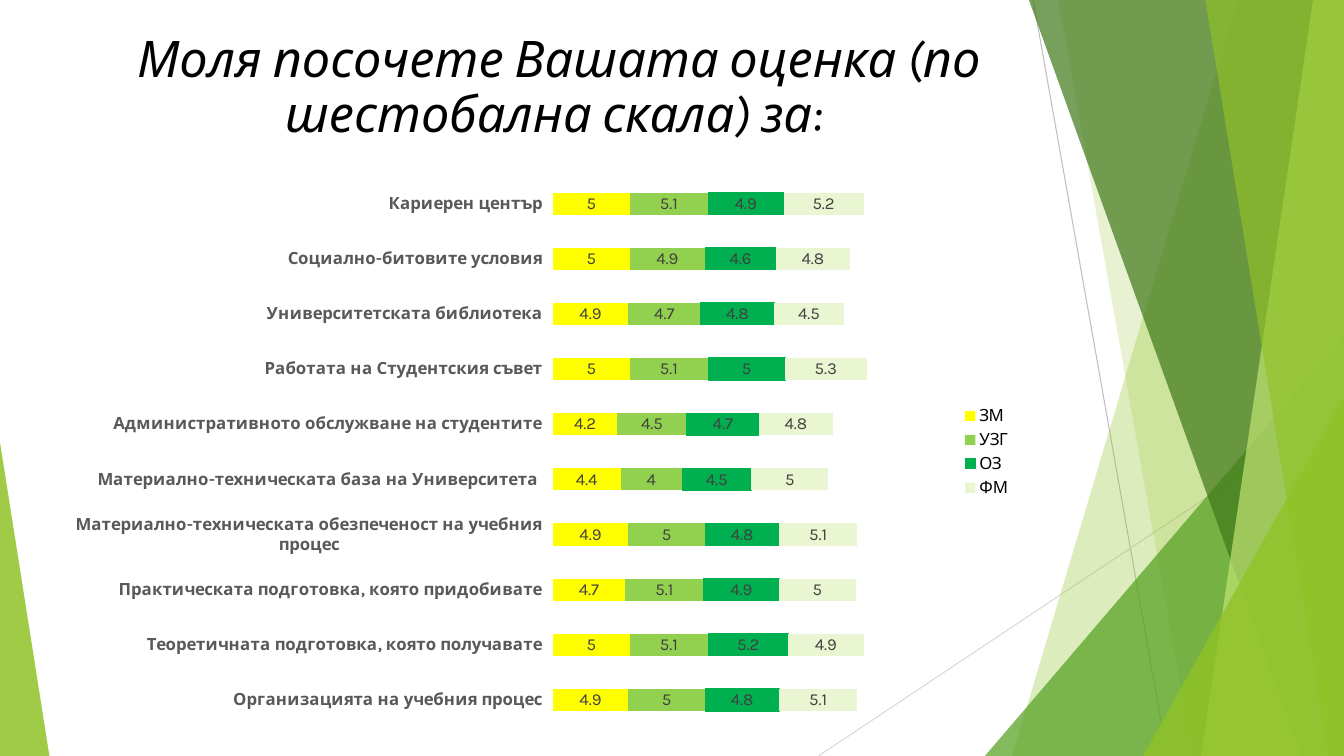
from lxml import etree
from pptx import Presentation
from pptx.chart.data import CategoryChartData
from pptx.dml.color import RGBColor
from pptx.enum.chart import XL_CHART_TYPE, XL_LABEL_POSITION, XL_LEGEND_POSITION, XL_TICK_MARK
from pptx.enum.shapes import MSO_CONNECTOR, MSO_SHAPE
from pptx.enum.text import MSO_ANCHOR, MSO_AUTO_SIZE, PP_ALIGN
from pptx.oxml import parse_xml
from pptx.oxml.ns import nsdecls, qn
from pptx.util import Pt

STRAIGHT = MSO_CONNECTOR.STRAIGHT
TRIANGLE = MSO_SHAPE.ISOSCELES_TRIANGLE
STACKED_BAR = XL_CHART_TYPE.BAR_STACKED
LABEL_CENTER = XL_LABEL_POSITION.CENTER
LEGEND_RIGHT = XL_LEGEND_POSITION.RIGHT
TICK_OUTSIDE = XL_TICK_MARK.OUTSIDE

FONT = "Karla"
BLACK = RGBColor(0x00, 0x00, 0x00)
LABEL_GRAY = RGBColor(0x40, 0x40, 0x40)
AXIS_GRAY = RGBColor(0x59, 0x59, 0x59)
MID_GRAY = RGBColor(0xBF, 0xBF, 0xBF)
LIGHT_GRAY = RGBColor(0xD9, 0xD9, 0xD9)
LEAF = RGBColor(0x90, 0xC2, 0x26)
GRASS = RGBColor(0x54, 0xA0, 0x21)
FOREST = RGBColor(0x3F, 0x78, 0x19)
LIME = RGBColor(0xC0, 0xE4, 0x74)
YELLOW = RGBColor(0xFF, 0xFF, 0x00)
LIGHT_GREEN = RGBColor(0x92, 0xD0, 0x50)
GREEN = RGBColor(0x00, 0xB0, 0x50)
PALE_GREEN = RGBColor(0xEA, 0xF6, 0xD1)

WIDTH, HEIGHT = 960, 540

TITLE = "Моля посочете Вашата оценка (по шестобална скала) за: "
TOPICS = [
    "Организацията на учебния процес",
    "Теоретичната подготовка, която получавате",
    "Практическата подготовка, която придобивате",
    "Материално-техническата обезпеченост на учебния процес",
    "Материално-техническата база на Университета ",
    "Административното обслужване на студентите",
    "Работата на Студентския съвет",
    "Университетската библиотека",
    "Социално-битовите условия",
    "Кариерен център",
]
FACULTIES = [
    ("ЗМ", YELLOW, [4.9, 5, 4.7, 4.9, 4.4, 4.2, 5, 4.9, 5, 5]),
    ("УЗГ", LIGHT_GREEN, [5, 5.1, 5.1, 5, 4, 4.5, 5.1, 4.7, 4.9, 5.1]),
    ("ОЗ", GREEN, [4.8, 5.2, 4.9, 4.8, 4.5, 4.7, 5, 4.8, 4.6, 4.9]),
    ("ФМ", PALE_GREEN, [5.1, 4.9, 5, 5.1, 5, 4.8, 5.3, 4.5, 4.8, 5.2]),
]


def format_font(font, size, color, bold=False, italic=False):
    font.name = FONT
    font.size = Pt(size)
    font.color.rgb = color
    font.bold = bold
    font.italic = italic


def write_text(frame, text, align=PP_ALIGN.LEFT, spacing=1.0, **font_format):
    paragraph = frame.paragraphs[0]
    paragraph.alignment = align
    paragraph.line_spacing = spacing
    run = paragraph.add_run()
    run.text = text
    format_font(run.font, **font_format)


def paint(shape, color, opacity):
    """Fill a shape with a see-through colour; opacity is in percent."""
    shape.shadow.inherit = False
    shape.line.fill.background()
    shape.fill.solid()
    shape.fill.fore_color.rgb = color
    fill_color = shape.fill._xPr.find(qn("a:solidFill"))[0]
    etree.SubElement(fill_color, qn("a:alpha")).set("val", str(opacity * 1000))


def add_ray(slide, start, end, color):
    ray = slide.shapes.add_connector(STRAIGHT, *map(Pt, start + end))
    ray.line.color.rgb = color
    ray.line.width = Pt(0.75)
    etree.SubElement(ray.element.spPr, qn("a:effectLst"))


def add_band(slide, top_left, bottom_left, color, opacity):
    """Add a full-height band from a slanted left edge to the slide's right edge."""
    outline = slide.shapes.build_freeform(Pt(top_left), 0)
    corners = [(WIDTH, 0), (WIDTH, HEIGHT), (bottom_left, HEIGHT)]
    outline.add_line_segments([(Pt(x), Pt(y)) for x, y in corners])
    paint(outline.convert_to_shape(), color, opacity)


def add_corner(slide, left, top, width, apex, color, opacity):
    """Add a triangle standing on the slide's bottom; apex is 0 (left) to 1 (right)."""
    corner = slide.shapes.add_shape(TRIANGLE, Pt(left), Pt(top), Pt(width), Pt(HEIGHT - top))
    corner.adjustments[0] = apex
    paint(corner, color, opacity)


def add_facets(slide):
    add_ray(slide, (738, 0), (833.75, HEIGHT), MID_GRAY)
    add_ray(slide, (WIDTH, 290), (584.6, HEIGHT), LIGHT_GRAY)
    add_band(slide, 884, 723, LEAF, 30)
    add_band(slide, 756, 852, LEAF, 20)
    add_corner(slide, 703.5, 240, WIDTH - 703.5, 1, GRASS, 72)
    add_band(slide, 735, 929.5, FOREST, 70)
    add_band(slide, 938, 858, LIME, 70)
    add_band(slide, 861, 949, LEAF, 65)
    add_corner(slide, 816.5, 283, WIDTH - 816.5, 1, LEAF, 80)
    add_corner(slide, 0, 316, 35.3, 0, LEAF, 85)


def add_title(slide, left, top, width, height):
    title = slide.shapes.title
    title.element.getparent().append(title.element)  # in front of the facets
    title.left, title.top, title.width, title.height = map(Pt, (left, top, width, height))
    frame = title.text_frame
    frame.word_wrap = True
    frame.auto_size = MSO_AUTO_SIZE.NONE
    frame.vertical_anchor = MSO_ANCHOR.TOP
    write_text(frame, TITLE, align=PP_ALIGN.CENTER, spacing=0.9,
               size=36, color=BLACK, italic=True)


def place_plot(chart, x, y, w, h):
    """Fix the inner plot area, in fractions of the chart."""
    plot_area = chart.element.chart.plotArea
    for layout in plot_area.findall(qn("c:layout")):
        plot_area.remove(layout)
    plot_area.insert(0, parse_xml(
        f'<c:layout {nsdecls("c")}><c:manualLayout><c:layoutTarget val="inner"/>'
        '<c:xMode val="edge"/><c:yMode val="edge"/>'
        f'<c:x val="{x}"/><c:y val="{y}"/><c:w val="{w}"/><c:h val="{h}"/>'
        '</c:manualLayout></c:layout>'))


def add_ratings_chart(slide, left, top, width, height):
    data = CategoryChartData()
    data.categories = TOPICS
    for faculty, _, ratings in FACULTIES:
        data.add_series(faculty, ratings)
    chart = slide.shapes.add_chart(
        STACKED_BAR, Pt(left), Pt(top), Pt(width), Pt(height), data).chart
    chart.has_title = False
    format_font(chart.font, 10, BLACK)
    place_plot(chart, 0.514, 0.02, 0.398, 0.96)

    topic_axis = chart.category_axis
    topic_axis.major_tick_mark = TICK_OUTSIDE
    topic_axis.format.line.fill.background()
    format_font(topic_axis.tick_labels.font, 12, AXIS_GRAY, bold=True)
    rating_axis = chart.value_axis
    rating_axis.has_major_gridlines = False
    rating_axis.visible = False
    rating_axis.minimum_scale, rating_axis.maximum_scale = 0, 25

    chart.has_legend = True
    chart.legend.position = LEGEND_RIGHT
    chart.legend.include_in_layout = False
    format_font(chart.legend.font, 12, BLACK)

    plot = chart.plots[0]
    plot.gap_width, plot.overlap, plot.vary_by_categories = 150, 100, False
    for series, (faculty, color, _) in zip(plot.series, FACULTIES):
        series.format.fill.solid()
        series.format.fill.fore_color.rgb = color
        if faculty == "ОЗ":
            series.format.line.color.rgb = color
            series.format.line.width = Pt(0.75)
        labels = series.data_labels
        labels.show_value = True
        labels.position = LABEL_CENTER
        format_font(labels.font, 12, LABEL_GRAY)


def main():
    deck = Presentation()
    deck.slide_width, deck.slide_height = Pt(WIDTH), Pt(HEIGHT)
    slide = deck.slides.add_slide(deck.slide_layouts.get_by_name("Title Only"))
    add_facets(slide)
    add_title(slide, 61, 21, 677, 103.5)
    add_ratings_chart(slide, 40, 117.5, 690.5, 410.5)
    deck.save("out.pptx")


if __name__ == "__main__":
    main()
